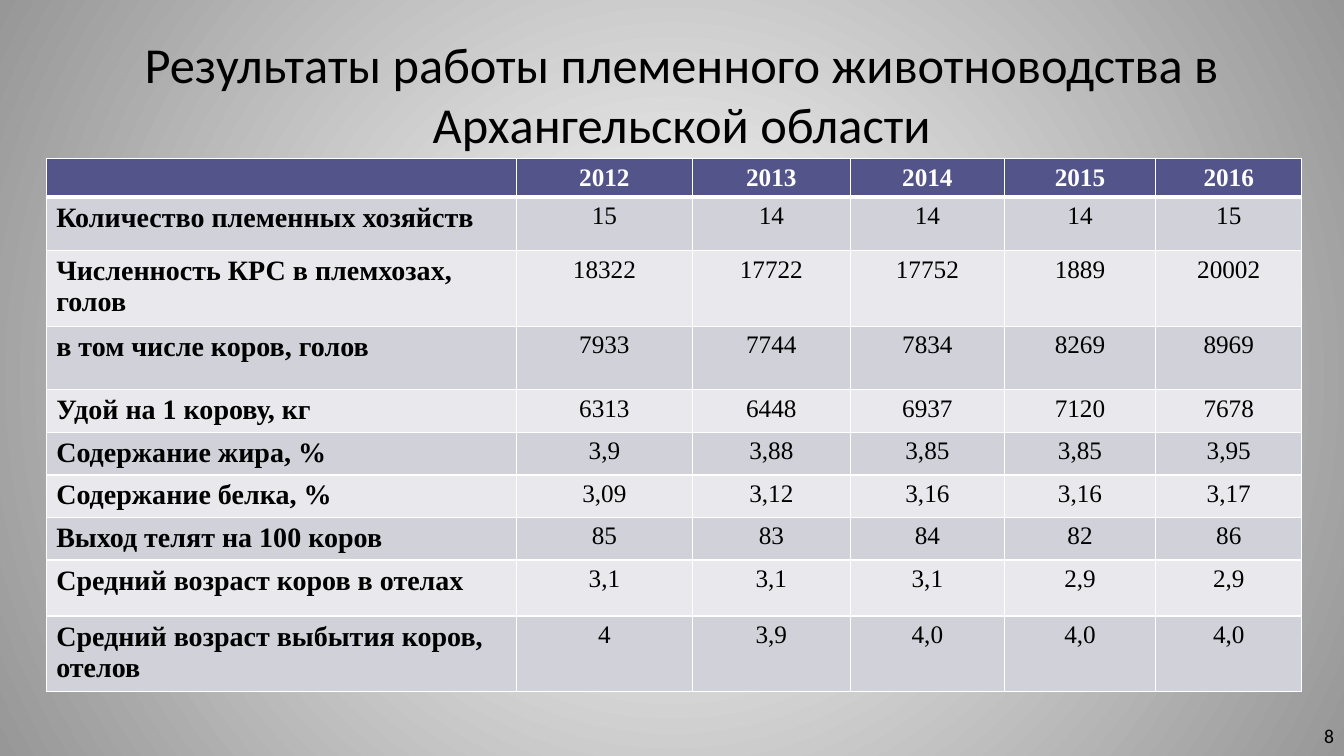
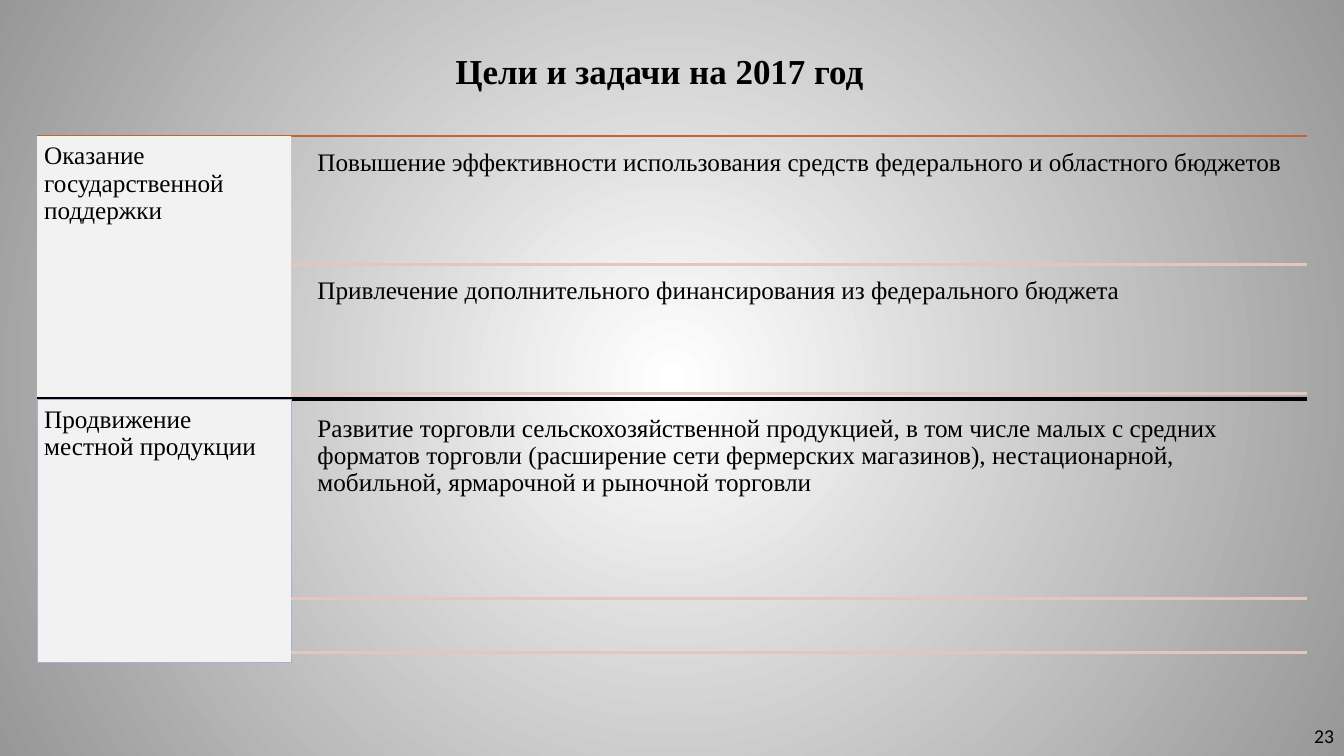
"""Build two slides on livestock breeding results and goals for 2017."""
from dataclasses import dataclass

from lxml.etree import SubElement
from pptx import Presentation
from pptx.dml.color import RGBColor
from pptx.enum.shapes import MSO_CONNECTOR, MSO_SHAPE
from pptx.enum.text import MSO_ANCHOR, MSO_AUTO_SIZE, PP_ALIGN
from pptx.oxml.ns import qn
from pptx.presentation import Presentation as Deck
from pptx.slide import Slide
from pptx.table import _Cell as Cell
from pptx.text.text import TextFrame
from pptx.util import Pt

LEFT, CENTER, RIGHT = PP_ALIGN.LEFT, PP_ALIGN.CENTER, PP_ALIGN.RIGHT
TOP, MIDDLE = MSO_ANCHOR.TOP, MSO_ANCHOR.MIDDLE
NO_AUTOFIT = MSO_AUTO_SIZE.NONE
RECTANGLE, STRAIGHT = MSO_SHAPE.RECTANGLE, MSO_CONNECTOR.STRAIGHT

SLIDE_WIDTH, SLIDE_HEIGHT = 960, 540
TITLE_ONLY = 5
BLACK, WHITE, EDGE_GRAY = "000000", "FFFFFF", "979797"
HEADER_FILL, BAND_FILLS = "53548A", ("D1D1DA", "E9E9ED")
PANEL_FILL, PANEL_OUTLINE = "F2F2F2", "AEAECE"
ORANGE, PALE_PINK = "C4652D", "E4C6BE"

PANEL_LEFT, PANEL_WIDTH, PANEL_HEIGHT = 26.6, 181.4, 188
DETAIL_LEFT, CONTENT_RIGHT = 221.8, 933.8
SECTIONS_TOP = 97.2
PANEL_INSET = 5


@dataclass(frozen=True)
class TextStyle:
    font: str
    size: float
    color: str = BLACK
    bold: bool = False
    alignment: PP_ALIGN = LEFT
    line_spacing: float = 1.0


@dataclass(frozen=True)
class Box:
    left: float
    top: float
    width: float
    height: float

    def lengths(self) -> tuple[Pt, Pt, Pt, Pt]:
        return Pt(self.left), Pt(self.top), Pt(self.width), Pt(self.height)


@dataclass(frozen=True)
class Detail:
    height: float
    text: str = ""


@dataclass(frozen=True)
class Section:
    label: str
    rule_color: str
    rule_width: float
    outline: str
    gap: float
    details: tuple[Detail, ...]


SERIF = "Times New Roman"
RESULTS_TITLE = TextStyle("Calibri", 36, alignment=CENTER)
GOALS_TITLE = TextStyle(SERIF, 25, bold=True, alignment=CENTER)
PAGE_NUMBER = TextStyle("Calibri", 14, alignment=RIGHT)
HEADER_TEXT = TextStyle(SERIF, 18, WHITE, True, CENTER)
ROW_LABEL = TextStyle(SERIF, 20, bold=True)
VALUE_TEXT = TextStyle(SERIF, 18, alignment=CENTER)
GOAL_TEXT = TextStyle(SERIF, 18, line_spacing=0.9)

COLUMN_WIDTHS = (336, 125.5, 113, 110, 108, 104.5)
ROW_HEIGHTS = (28, 38, 54, 45.5, 30.4, 30.4, 30.4, 30.4, 40, 54)
RESULTS = (
    ("", "2012", "2013", "2014", "2015", "2016"),
    ("Количество племенных хозяйств", "15", "14", "14", "14", "15"),
    ("Численность КРС в племхозах, голов",
     "18322", "17722", "17752", "1889", "20002"),
    ("в том числе коров, голов", "7933", "7744", "7834", "8269", "8969"),
    ("Удой на 1 корову, кг", "6313", "6448", "6937", "7120", "7678"),
    ("Содержание жира, %", "3,9", "3,88", "3,85", "3,85", "3,95"),
    ("Содержание белка, %", "3,09", "3,12", "3,16", "3,16", "3,17"),
    ("Выход телят на 100 коров", "85", "83", "84", "82", "86"),
    ("Средний возраст коров в отелах", "3,1", "3,1", "3,1", "2,9", "2,9"),
    ("Средний возраст выбытия коров, отелов",
     "4", "3,9", "4,0", "4,0", "4,0"),
)

SECTIONS = (
    Section("Оказание государственной поддержки", ORANGE, 2, "", 4.4, (
        Detail(87.4, "Повышение эффективности использования средств "
                     "федерального и областного бюджетов"),
        Detail(87.4, "Привлечение дополнительного финансирования "
                     "из федерального бюджета"),
    )),
    Section("Продвижение местной продукции", BLACK, 3, PANEL_OUTLINE, 6.5, (
        Detail(136, "Развитие торговли сельскохозяйственной продукцией, "
                    "в том числе малых с средних форматов торговли "
                    "(расширение сети фермерских магазинов), "
                    "нестационарной, мобильной, ярмарочной и рыночной "
                    "торговли"),
        Detail(31.6),
    )),
)


def rgb(color: str) -> RGBColor:
    return RGBColor.from_string(color)


def write(text_frame: TextFrame, text: str, style: TextStyle) -> None:
    text_frame.text = text
    for paragraph in text_frame.paragraphs:
        paragraph.alignment = style.alignment
        paragraph.line_spacing = style.line_spacing
        for run in paragraph.runs:
            run.font.name = style.font
            run.font.size = Pt(style.size)
            run.font.bold = style.bold
            run.font.color.rgb = rgb(style.color)


def set_frame(text_frame: TextFrame, anchor: MSO_ANCHOR) -> None:
    text_frame.word_wrap = True
    text_frame.auto_size = NO_AUTOFIT
    text_frame.vertical_anchor = anchor


def set_insets(text_frame: TextFrame, inset: float) -> None:
    text_frame.margin_left = text_frame.margin_right = Pt(inset)
    text_frame.margin_top = text_frame.margin_bottom = Pt(inset)


def set_background(presentation: Deck) -> None:
    master = presentation.slide_master
    fill = master.background.fill
    fill.gradient()
    for stop, color in zip(fill.gradient_stops, (WHITE, EDGE_GRAY)):
        stop.color.rgb = rgb(color)
    for stop, position in zip(fill.gradient_stops, (0, 1)):
        stop.position = position
    gradient = master.element.find(".//" + qn("a:gradFill"))
    gradient.remove(gradient.find(qn("a:lin")))
    circle = SubElement(gradient, qn("a:path"), {"path": "circle"})
    center = {side: "50000" for side in "ltrb"}
    SubElement(circle, qn("a:fillToRect"), center)


def add_text(slide: Slide, box: Box, text: str, style: TextStyle,
             anchor: MSO_ANCHOR = TOP, inset: float = PANEL_INSET) -> None:
    text_frame = slide.shapes.add_textbox(*box.lengths()).text_frame
    set_frame(text_frame, anchor)
    set_insets(text_frame, inset)
    write(text_frame, text, style)


def add_titled_slide(presentation: Deck, title: str, style: TextStyle,
                     box: Box, number: str) -> Slide:
    slide = presentation.slides.add_slide(
        presentation.slide_layouts[TITLE_ONLY])
    shape = slide.shapes.title
    shape.left, shape.top, shape.width, shape.height = box.lengths()
    set_frame(shape.text_frame, MIDDLE)
    write(shape.text_frame, title, style)
    add_text(slide, Box(736, 511, 224, 29), number, PAGE_NUMBER, MIDDLE, 7.2)
    return slide


def add_rule(slide: Slide, left: float, top: float, color: str,
             width: float) -> None:
    connector = slide.shapes.add_connector(
        STRAIGHT, Pt(left), Pt(top), Pt(CONTENT_RIGHT), Pt(top))
    connector.line.color.rgb = rgb(color)
    connector.line.width = Pt(width)
    SubElement(connector.element.spPr, qn("a:effectLst"))


def set_borders(cell: Cell, widths: dict[str, float]) -> None:
    properties = cell._tc.get_or_add_tcPr()
    for side, width in widths.items():
        line = SubElement(properties, qn(f"a:ln{side}"), {"w": str(Pt(width))})
        solid = SubElement(line, qn("a:solidFill"))
        SubElement(solid, qn("a:srgbClr"), {"val": WHITE})


def format_cell(cell: Cell, text: str, row: int, column: int) -> None:
    if row == 0:
        style, fill = HEADER_TEXT, HEADER_FILL
        cell.vertical_anchor = MIDDLE
        cell.margin_top = cell.margin_bottom = Pt(2)
    else:
        style = VALUE_TEXT if column else ROW_LABEL
        fill = BAND_FILLS[(row - 1) % 2]
    set_borders(cell, {"L": 1, "R": 1, "T": 3 if row == 1 else 1,
                       "B": 3 if row == 0 else 1})
    cell.fill.solid()
    cell.fill.fore_color.rgb = rgb(fill)
    write(cell.text_frame, text, style)


def add_results_table(slide: Slide) -> None:
    box = Box(33, 113, sum(COLUMN_WIDTHS), sum(ROW_HEIGHTS))
    table = slide.shapes.add_table(
        len(RESULTS), len(COLUMN_WIDTHS), *box.lengths()).table
    for column, width in zip(table.columns, COLUMN_WIDTHS):
        column.width = Pt(width)
    for row, height in zip(table.rows, ROW_HEIGHTS):
        row.height = Pt(height)
    for row_index, texts in enumerate(RESULTS):
        for column_index, text in enumerate(texts):
            format_cell(table.cell(row_index, column_index), text,
                        row_index, column_index)


def add_panel(slide: Slide, section: Section, top: float) -> None:
    box = Box(PANEL_LEFT, top, PANEL_WIDTH, PANEL_HEIGHT)
    shape = slide.shapes.add_shape(RECTANGLE, *box.lengths())
    shape.shadow.inherit = False
    shape.fill.solid()
    shape.fill.fore_color.rgb = rgb(PANEL_FILL)
    if section.outline:
        shape.line.color.rgb = rgb(section.outline)
        shape.line.width = Pt(0.75)
    else:
        shape.line.fill.background()
    set_frame(shape.text_frame, TOP)
    set_insets(shape.text_frame, PANEL_INSET)
    write(shape.text_frame, section.label, GOAL_TEXT)


def add_section(slide: Slide, section: Section, top: float) -> None:
    add_rule(slide, PANEL_LEFT, top, section.rule_color, section.rule_width)
    add_panel(slide, section, top)
    bottom = top
    for detail in section.details:
        detail_top = bottom + section.gap
        bottom = detail_top + detail.height
        if detail.text:
            box = Box(DETAIL_LEFT, detail_top, CONTENT_RIGHT - DETAIL_LEFT,
                      detail.height)
            add_text(slide, box, detail.text, GOAL_TEXT)
        add_rule(slide, PANEL_LEFT + PANEL_WIDTH, bottom, PALE_PINK, 2)


def main() -> None:
    presentation = Presentation()
    presentation.slide_width = Pt(SLIDE_WIDTH)
    presentation.slide_height = Pt(SLIDE_HEIGHT)
    set_background(presentation)

    results_slide = add_titled_slide(
        presentation,
        "Результаты работы племенного животноводства в Архангельской области",
        RESULTS_TITLE, Box(63, 21.6, 848, 90), "8")
    add_results_table(results_slide)

    goals_slide = add_titled_slide(
        presentation, "Цели и задачи на 2017 год",
        GOALS_TITLE, Box(39, 25, 864, 50), "23")
    for index, section in enumerate(SECTIONS):
        add_section(goals_slide, section, SECTIONS_TOP + index * PANEL_HEIGHT)

    presentation.save("out.pptx")


if __name__ == "__main__":
    main()
